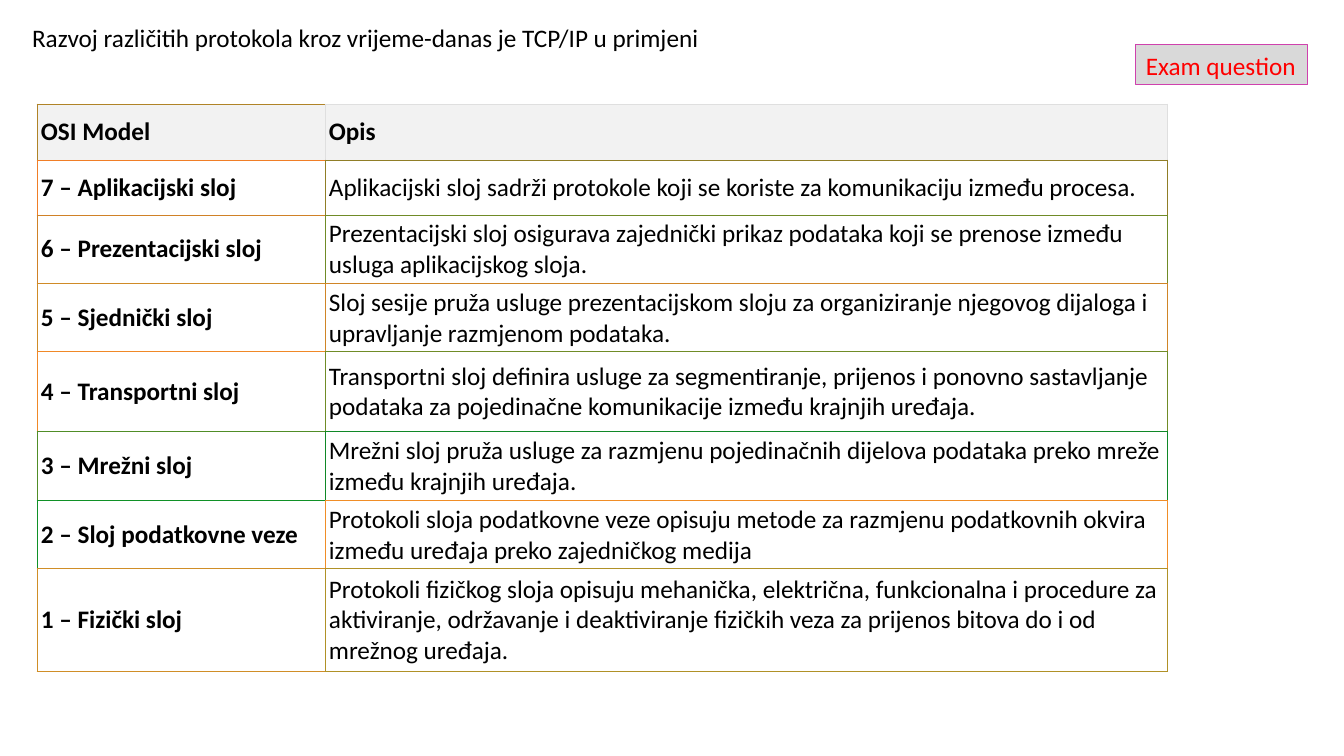
"""Build a slide with a table of the seven OSI layers."""
import pptx
import pptx.dml.color
import pptx.enum.shapes
import pptx.enum.text
import pptx.oxml
import pptx.oxml.ns
import pptx.util

TITLE = "Razvoj različitih protokola kroz vrijeme-danas je TCP/IP u primjeni"
BADGE = "Exam question"
ROWS = [
    ("OSI Model", "Opis"),
    ("7 – Aplikacijski sloj",
     "Aplikacijski sloj sadrži protokole koji se koriste za komunikaciju između procesa."),
    ("6 – Prezentacijski sloj",
     "Prezentacijski sloj osigurava zajednički prikaz podataka koji se prenose između "
     "usluga aplikacijskog sloja."),
    ("5 – Sjednički sloj",
     "Sloj sesije pruža usluge prezentacijskom sloju za organiziranje njegovog dijaloga i "
     "upravljanje razmjenom podataka."),
    ("4 – Transportni sloj",
     "Transportni sloj definira usluge za segmentiranje, prijenos i ponovno sastavljanje "
     "podataka za pojedinačne komunikacije između krajnjih uređaja."),
    ("3 – Mrežni sloj",
     "Mrežni sloj pruža usluge za razmjenu pojedinačnih dijelova podataka preko mreže "
     "između krajnjih uređaja."),
    ("2 – Sloj podatkovne veze",
     "Protokoli sloja podatkovne veze opisuju metode za razmjenu podatkovnih okvira "
     "između uređaja preko zajedničkog medija"),
    ("1 – Fizički sloj",
     "Protokoli fizičkog sloja opisuju mehanička, električna, funkcionalna i procedure za "
     "aktiviranje, održavanje i deaktiviranje fizičkih veza za prijenos bitova do i od "
     "mrežnog uređaja."),
]
EDGES = [
    ("B08327", "DFDFDF"), ("F07E27", "907E27"), ("D08127", "708B27"),
    ("D08B27", "D08527"), ("F08827", "708C27"), ("508D27", "108827"),
    ("109127", "F08D27"), ("D08E27", "B09127"),
]
COLORS = {"text": "000000", "head": "F2F2F2", "body": "FFFFFF",
          "badge": "D9D9D9", "rim": "CF41AD", "alert": "FF0000"}
WIDTHS = [288, 842]
HEIGHTS = [56, 55, 68, 68, 80, 68, 68, 103]
FONT = "Calibri"
SIZE = 18
LINE = 0.75
INSET = 4


def px(count):
    return pptx.util.Emu(round(count * 914400 / 100.8))


def rgb(color):
    return pptx.dml.color.RGBColor.from_string(color)


def write(frame, text, color=COLORS["text"], bold=False,
          align=pptx.enum.text.PP_ALIGN.LEFT):
    frame.text = text
    para = frame.paragraphs[0]
    para.alignment = align
    font = para.runs[0].font
    font.name, font.size, font.bold = FONT, pptx.util.Pt(SIZE), bold
    font.color.rgb = rgb(color)


def border(cell, sides):
    props = cell._tc.get_or_add_tcPr()
    for spot, (side, color) in enumerate(sides.items()):
        props.insert(spot, pptx.oxml.parse_xml(
            f'<a:ln{side} {pptx.oxml.ns.nsdecls("a")} w="{pptx.util.Pt(LINE)}">'
            f'<a:solidFill><a:srgbClr val="{color}"/></a:solidFill></a:ln{side}>'))


def add_title(slide):
    title = slide.shapes.title
    title.left, title.top, title.width, title.height = map(px, (22, 17, 688, 40))
    frame = title.text_frame
    write(frame, TITLE)
    frame.word_wrap = False
    frame.auto_size = pptx.enum.text.MSO_AUTO_SIZE.SHAPE_TO_FIT_TEXT
    frame.vertical_anchor = pptx.enum.text.MSO_ANCHOR.TOP


def add_layers(slide):
    table = slide.shapes.add_table(
        len(ROWS), len(WIDTHS), px(37), px(104),
        px(sum(WIDTHS)), px(sum(HEIGHTS))).table
    for col, width in zip(table.columns, WIDTHS):
        col.width = px(width)
    for row, height in zip(table.rows, HEIGHTS):
        row.height = px(height)
    for r, row in enumerate(ROWS):
        below = EDGES[min(r + 1, len(ROWS) - 1)]
        for c, text in enumerate(row):
            cell = table.cell(r, c)
            cell.margin_left = cell.margin_right = px(INSET)
            cell.margin_top = cell.margin_bottom = px(INSET)
            cell.vertical_anchor = pptx.enum.text.MSO_ANCHOR.MIDDLE
            write(cell.text_frame, text, bold=r == 0 or c == 0)
            cell.fill.solid()
            cell.fill.fore_color.rgb = rgb(COLORS["body" if r else "head"])
            own = EDGES[r][c]
            border(cell, {"L": own, "R": EDGES[r][1], "T": own, "B": below[c]})


def add_badge(slide):
    badge = slide.shapes.add_shape(
        pptx.enum.shapes.MSO_SHAPE.RECTANGLE, *map(px, (1136, 45, 172, 40)))
    badge.shadow.inherit = False
    badge.fill.solid()
    badge.fill.fore_color.rgb = rgb(COLORS["badge"])
    badge.line.color.rgb = rgb(COLORS["rim"])
    badge.line.width = pptx.util.Pt(LINE)
    frame = badge.text_frame
    write(frame, BADGE, COLORS["alert"])
    frame.word_wrap = False
    frame.auto_size = pptx.enum.text.MSO_AUTO_SIZE.SHAPE_TO_FIT_TEXT
    frame.vertical_anchor = pptx.enum.text.MSO_ANCHOR.TOP


def main():
    deck = pptx.Presentation()
    deck.slide_width, deck.slide_height = px(1344), px(756)
    slide = deck.slides.add_slide(deck.slide_layouts[5])
    add_title(slide)
    add_layers(slide)
    add_badge(slide)
    deck.save("out.pptx")


if __name__ == "__main__":
    main()
